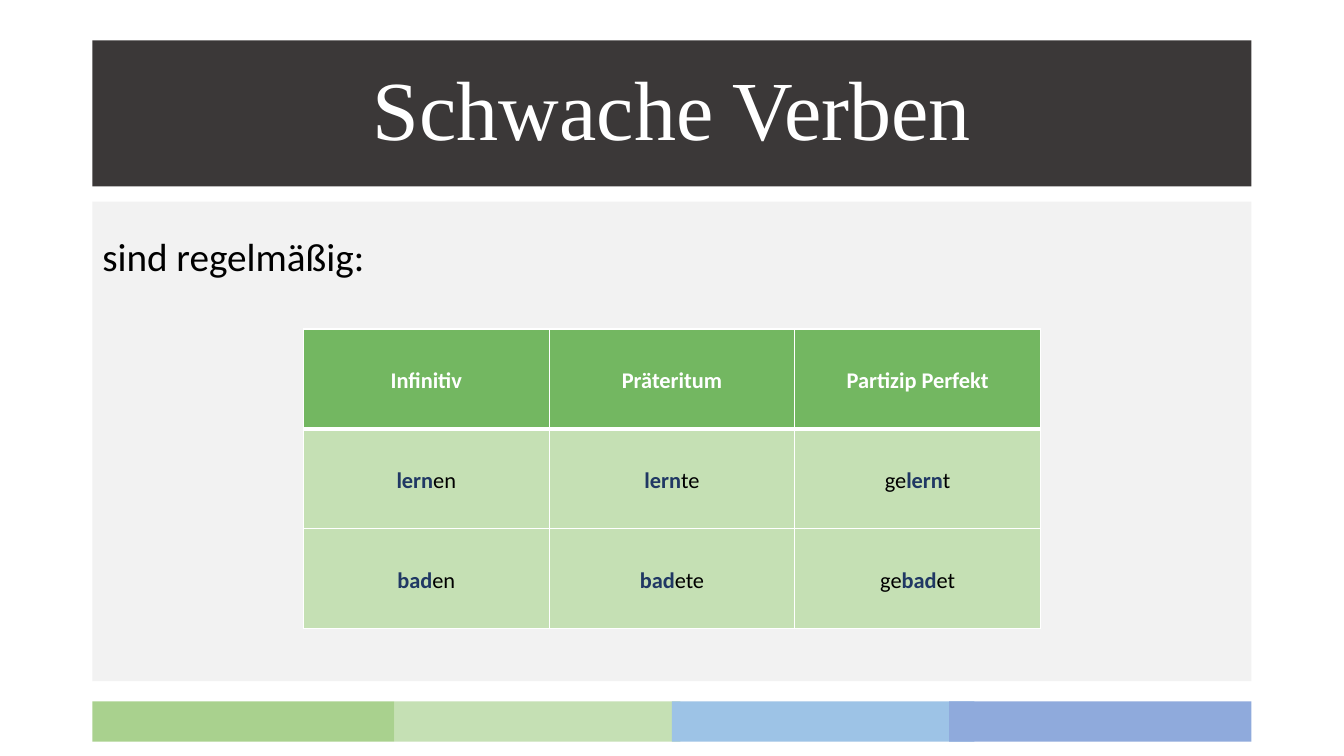
from lxml import etree
from pptx import Presentation
from pptx.dml.color import RGBColor
from pptx.enum.shapes import MSO_SHAPE
from pptx.enum.text import MSO_ANCHOR, PP_ALIGN
from pptx.oxml.ns import qn
from pptx.util import Pt

RECT = MSO_SHAPE.RECTANGLE
MIDDLE, TOP = MSO_ANCHOR.MIDDLE, MSO_ANCHOR.TOP
CENTER, LEFT = PP_ALIGN.CENTER, PP_ALIGN.LEFT
WHITE, BLACK, NAVY = "FFFFFF", "000000", "203864"
DARK, PALE = "3B3838", "F2F2F2"
GREEN, MINT = "73B761", "C5E0B4"
HEADS = ["Infinitiv", "Präteritum", "Partizip Perfekt"]
# Each verb form is prefix, stem, ending
VERBS = [
    [("", "lern", "en"), ("", "lern", "te"), ("ge", "lern", "t")],
    [("", "bad", "en"), ("", "bad", "ete"), ("ge", "bad", "et")],
]
# Offset, width and colour, from back to front
BANDS = [(216, 204, MINT), (414, 216, "9DC3E6"),
         (0, 216, "A9D18E"), (612, 216, "8FAADC")]


def color(code):
    return RGBColor.from_string(code)


def style(font, size, code, name="Calibri", bold=False):
    font.size, font.name, font.bold = Pt(size), name, bold
    font.color.rgb = color(code)


def add_rect(slide, box, fill):
    shape = slide.shapes.add_shape(RECT, *map(Pt, box))
    shape.shadow.inherit = False
    shape.fill.solid()
    shape.fill.fore_color.rgb = color(fill)
    shape.line.fill.background()
    return shape


def add_panel(slide, box, fill, text, size, code, name, align, anchor, inset=3.6):
    """Draw a filled box with one paragraph, inset from its top."""
    frame = add_rect(slide, box, fill).text_frame
    frame.word_wrap = True
    frame.vertical_anchor = anchor
    frame.margin_top = Pt(inset)
    para = frame.paragraphs[0]
    para.text = text
    para.alignment = align
    para.line_spacing = 0.9
    style(para.font, size, code, name)


def add_bands(slide, box):
    left, top, _, height = box
    for shift, width, fill in BANDS:
        add_rect(slide, (left + shift, top, width, height), fill)


def set_edges(cell, row):
    """Draw white cell borders, thick below the header row."""
    props = cell._tc.get_or_add_tcPr()
    thick = {"lnB": row == 0, "lnT": row == 1}
    for tag in ("lnL", "lnR", "lnT", "lnB"):
        width = Pt(3 if thick.get(tag) else 1)
        line = etree.SubElement(props, qn("a:" + tag), w=str(width))
        fill = etree.SubElement(line, qn("a:solidFill"))
        etree.SubElement(fill, qn("a:srgbClr"), val=WHITE)


def fill_cell(cell, row, content):
    set_edges(cell, row)
    cell.fill.solid()
    cell.fill.fore_color.rgb = color(MINT if row else GREEN)
    cell.vertical_anchor = MIDDLE
    cell.margin_left = cell.margin_right = Pt(5)
    cell.margin_top = cell.margin_bottom = 0
    para = cell.text_frame.paragraphs[0]
    para.alignment = CENTER
    para.line_spacing = 1.15
    if row == 0:
        para.text = content
        style(para.font, 16, WHITE, bold=True)
        return
    for part, code in zip(content, (BLACK, NAVY, BLACK)):
        if part:
            run = para.add_run()
            run.text = part
            style(run.font, 16, code, bold=code == NAVY)


def add_verbs(slide, box):
    rows = [HEADS, *VERBS]
    table = slide.shapes.add_table(len(rows), len(HEADS), *map(Pt, box)).table
    for col in table.columns:
        col.width = Pt(box[2] / len(HEADS))
    for r, items in enumerate(rows):
        table.rows[r].height = Pt(box[3] / len(rows))
        for c, content in enumerate(items):
            fill_cell(table.cell(r, c), r, content)


def main():
    deck = Presentation()
    deck.slide_width, deck.slide_height = Pt(960), Pt(540)
    slide = deck.slides.add_slide(deck.slide_layouts[6])
    left, width = 66, 828
    add_bands(slide, (left, 501, width, 28.8))
    add_panel(slide, (left, 28.8, width, 104.4), DARK, "Schwache Verben",
              60, WHITE, "Times New Roman", CENTER, MIDDLE)
    add_panel(slide, (left, 144, width, 342.6), PALE, "sind regelmäßig:",
              28, BLACK, "Calibri", LEFT, TOP, 26)
    add_verbs(slide, (216.75, 235, 526.5, 214.2))
    deck.save("out.pptx")


if __name__ == "__main__":
    main()
